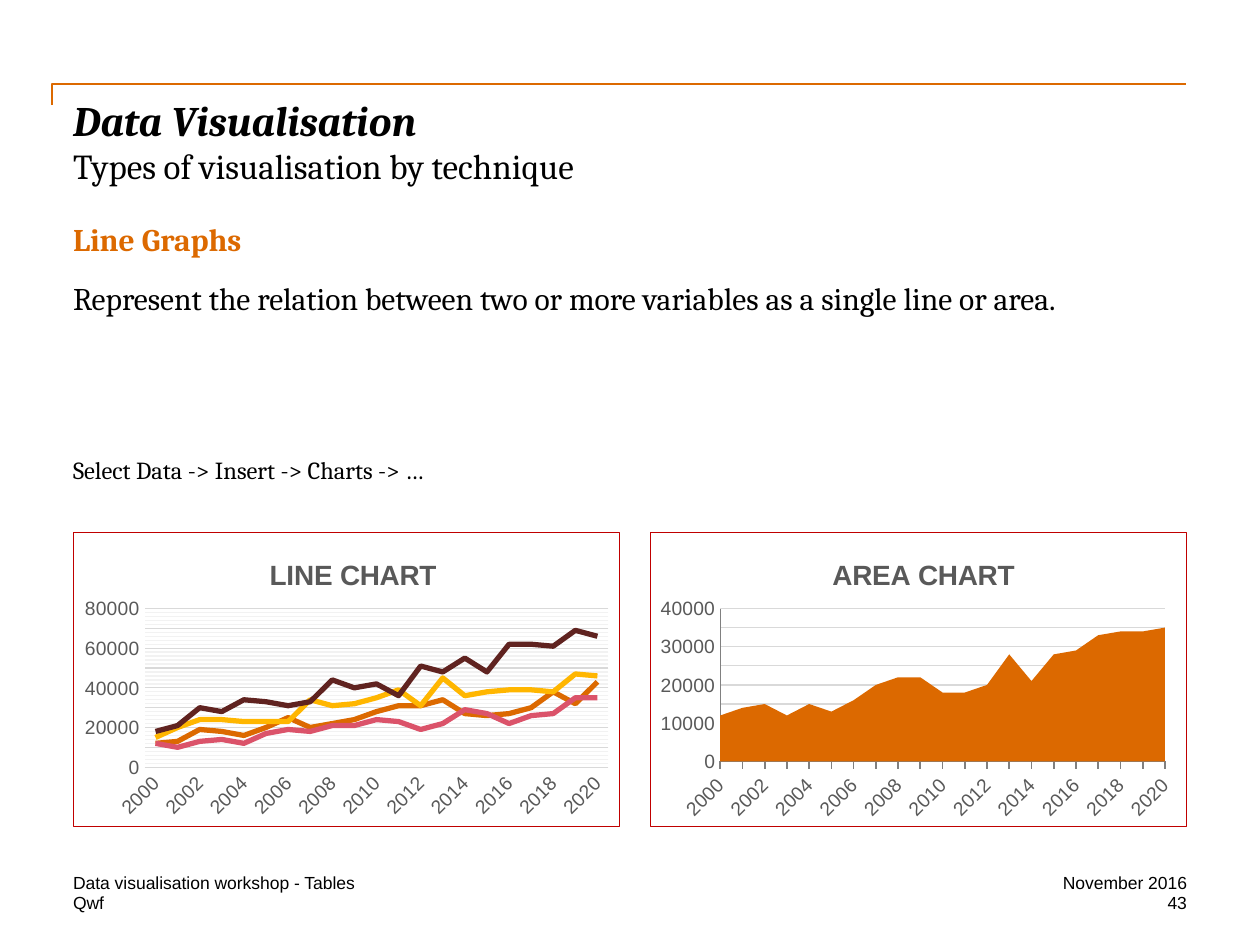
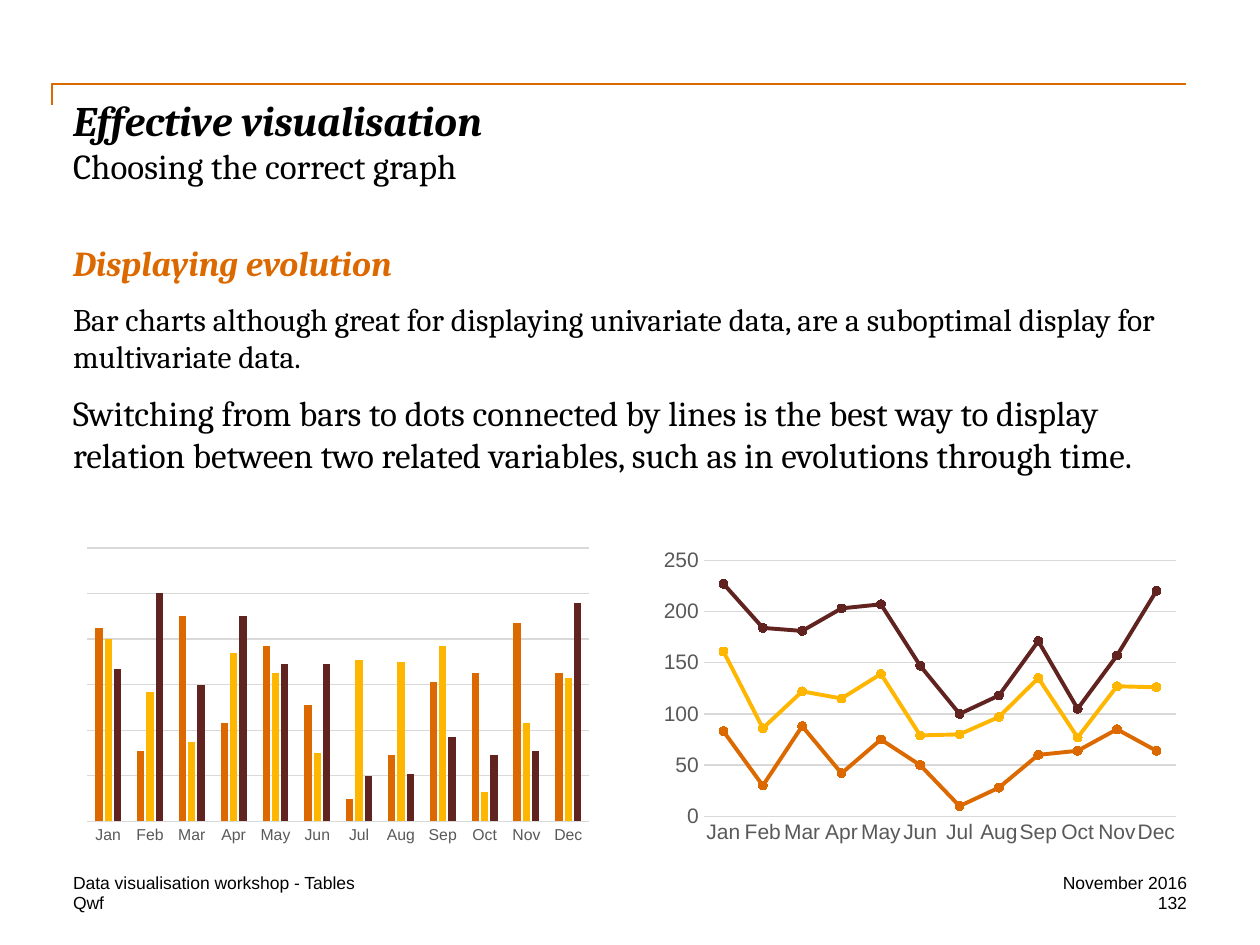
from dataclasses import dataclass
from typing import Optional, Sequence

from lxml import etree
from pptx import Presentation
from pptx.chart.data import CategoryChartData
from pptx.dml.color import RGBColor
from pptx.enum.chart import XL_CHART_TYPE, XL_MARKER_STYLE, XL_TICK_MARK
from pptx.enum.shapes import MSO_CONNECTOR
from pptx.enum.text import MSO_ANCHOR, PP_ALIGN
from pptx.oxml import parse_xml
from pptx.oxml.ns import nsdecls, qn
from pptx.util import Inches, Pt

LINE, AREA = XL_CHART_TYPE.LINE, XL_CHART_TYPE.AREA
COLUMNS, STACKED_DOTS = XL_CHART_TYPE.COLUMN_CLUSTERED, XL_CHART_TYPE.LINE_MARKERS_STACKED
LEFT, RIGHT = PP_ALIGN.LEFT, PP_ALIGN.RIGHT
TOP, BOTTOM = MSO_ANCHOR.TOP, MSO_ANCHOR.BOTTOM
NO_TICK, TICK_OUT = XL_TICK_MARK.NONE, XL_TICK_MARK.OUTSIDE
NO_MARKER, CIRCLE = XL_MARKER_STYLE.NONE, XL_MARKER_STYLE.CIRCLE
ELBOW = MSO_CONNECTOR.ELBOW

COLORS = {
    "text": "000000", "orange": "DC6900", "yellow": "FFB600", "maroon": "602320",
    "pink": "DB536A", "label": "595959", "grid": "D9D9D9", "minor_grid": "F2F2F2",
    "axis": "808080", "border": "C00000",
}
SERIES_COLORS = ["orange", "yellow", "maroon", "pink"]
SERIF, SANS = "Cambria", "Arial"
MARGIN, CONTENT_WIDTH = 0.58, 8.83
FOOTER_ROWS = (6.92, 7.08)

YEARS = [str(year) for year in range(2000, 2021)]
MONTHS = "Jan Feb Mar Apr May Jun Jul Aug Sep Oct Nov Dec".split()


@dataclass(frozen=True)
class Box:
    left: float
    top: float
    width: float
    height: float

    def lengths(self) -> list:
        return [Inches(v) for v in (self.left, self.top, self.width, self.height)]


@dataclass(frozen=True)
class Para:
    text: str
    size: float
    color: str = "text"
    font: str = SERIF
    bold: bool = False
    italic: bool = False
    before: float = 0
    after: float = 0


@dataclass(frozen=True)
class ChartSpec:
    """Plot is the inner plot area in fractions of the chart frame."""
    kind: int
    box: Box
    plot: Box
    categories: Sequence[str]
    series: Sequence[Sequence[float]]
    maximum: float
    major: float
    label_size: float
    minor: Optional[float] = None
    title: str = ""
    title_left: float = 0
    line_width: float = 0
    framed: bool = False
    value_labels: bool = True


@dataclass(frozen=True)
class SlideSpec:
    title: str
    subtitle: str
    number: str
    body_top: float
    body: Sequence[Para]
    charts: Sequence[ChartSpec]


def rgb(name: str) -> RGBColor:
    return RGBColor.from_string(COLORS[name])


def set_font(font, *, size: float, color: str = "text", name: str = SANS,
             bold: bool = False, italic: bool = False) -> None:
    font.size, font.name, font.bold, font.italic = Pt(size), name, bold, italic
    font.color.rgb = rgb(color)


def set_line(line, color: str, width: float) -> None:
    line.color.rgb = rgb(color)
    line.width = Pt(width)


def set_fill(fill, color: str) -> None:
    fill.solid()
    fill.fore_color.rgb = rgb(color)


def add_text(slide, box: Box, paras: Sequence[Para], *, align=LEFT, anchor=TOP) -> None:
    frame = slide.shapes.add_textbox(*box.lengths()).text_frame
    frame.word_wrap = True
    frame.vertical_anchor = anchor
    frame.margin_left = frame.margin_right = frame.margin_top = frame.margin_bottom = 0
    for index, para in enumerate(paras):
        paragraph = frame.add_paragraph() if index else frame.paragraphs[0]
        paragraph.alignment = align
        paragraph.space_before, paragraph.space_after = Pt(para.before), Pt(para.after)
        run = paragraph.add_run()
        run.text = para.text
        set_font(run.font, size=para.size, color=para.color, name=para.font,
                 bold=para.bold, italic=para.italic)


def add_header_rule(slide) -> None:
    """Long rule with a short drop at its left end: a quarter-turned elbow."""
    rule = slide.shapes.add_connector(
        ELBOW, Inches(5), Inches(5.25), Inches(4.83), Inches(-3.75))
    set_line(rule.line, "orange", 1)
    properties = rule._element.spPr
    properties.find(qn("a:xfrm")).set("rot", "5400000")
    properties.find(qn("a:prstGeom")).set("prst", "bentConnector2")
    etree.SubElement(properties, qn("a:effectLst"))


def add_footer(slide, number: str) -> None:
    sides = (
        (MARGIN, 5.75, LEFT, ("Data visualisation workshop - Tables", "Qwf")),
        (7.75, 1.67, RIGHT, ("November 2016", number)),
    )
    for left, width, align, texts in sides:
        for top, text in zip(FOOTER_ROWS, texts):
            add_text(slide, Box(left, top, width, 0.17), [Para(text, 10, font=SANS)],
                     align=align, anchor=BOTTOM)


def set_layout(parent, after: Optional[str], **fractions: float) -> None:
    """Place a chart part by hand, its layout following the named child."""
    for old in parent.findall(qn("c:layout")):
        parent.remove(old)
    target = '<c:layoutTarget val="inner"/>' if "w" in fractions else ""
    modes = '<c:xMode val="edge"/><c:yMode val="edge"/>'
    values = "".join(f'<c:{key} val="{value}"/>' for key, value in fractions.items())
    layout = parse_xml(f'<c:layout {nsdecls("c")}><c:manualLayout>{target}{modes}{values}'
                       "</c:manualLayout></c:layout>")
    if after:
        parent.find(qn(after)).addnext(layout)
    else:
        parent.insert(0, layout)


def line_properties(color: Optional[str], width: float = 0.75):
    """Chart shape properties with no fill and the given line, or none."""
    paint = (f'<a:solidFill><a:srgbClr val="{COLORS[color]}"/></a:solidFill>'
             if color else "<a:noFill/>")
    return parse_xml(f'<c:spPr {nsdecls("c", "a")}><a:noFill/>'
                     f'<a:ln w="{Pt(width)}">{paint}</a:ln></c:spPr>')


def style_axes(chart, spec: ChartSpec) -> None:
    is_area = spec.kind == AREA
    category, value = chart.category_axis, chart.value_axis
    for axis in (category, value):
        axis.major_tick_mark = axis.minor_tick_mark = NO_TICK
        set_font(axis.tick_labels.font, size=spec.label_size, color="label")
    category.has_major_gridlines = False
    set_line(category.format.line, "axis" if is_area else "grid", 1 if is_area else 0.75)
    if is_area:
        category.major_tick_mark = TICK_OUT
        set_line(value.format.line, "axis", 0.75)
        value._element.find(qn("c:crossBetween")).set("val", "midCat")
    else:
        value.format.line.fill.background()
    if spec.categories is YEARS:
        category._element.find(qn("c:txPr")).find(qn("a:bodyPr")).set("rot", "-2700000")
        skip = parse_xml(f'<c:tickLblSkip {nsdecls("c")} val="2"/>')
        category._element.find(qn("c:noMultiLvlLbl")).addprevious(skip)
    value.minimum_scale, value.maximum_scale, value.major_unit = 0, spec.maximum, spec.major
    value.tick_labels.number_format = "General"
    value.tick_labels.number_format_is_linked = False
    value.has_major_gridlines = True
    set_line(value.major_gridlines.format.line, "grid", 0.75)
    if spec.minor:
        value.minor_unit = spec.minor
        value.has_minor_gridlines = True
        value._element.find(qn("c:minorGridlines")).append(line_properties("minor_grid"))
    value.visible = spec.value_labels


def style_series(chart, spec: ChartSpec) -> None:
    plot = chart.plots[0]
    plot.vary_by_categories = False
    if spec.kind == COLUMNS:
        plot.gap_width, plot.overlap = 219, -27
    for series, color in zip(plot.series, SERIES_COLORS):
        if not spec.line_width:
            set_fill(series.format.fill, color)
            continue
        series.smooth = False
        set_line(series.format.line, color, spec.line_width)
        marker = series.marker
        if spec.kind == STACKED_DOTS:
            marker.style, marker.size = CIRCLE, 5
            set_fill(marker.format.fill, color)
            set_line(marker.format.line, color, 0.75)
        else:
            marker.style = NO_MARKER


def add_chart(slide, spec: ChartSpec) -> None:
    data = CategoryChartData()
    data.categories = spec.categories
    for index, values in enumerate(spec.series, start=1):
        data.add_series(f"Series {index}", values)
    chart = slide.shapes.add_chart(spec.kind, *spec.box.lengths(), data).chart
    set_font(chart.font, size=10)
    chart.has_legend = False
    chart.has_title = bool(spec.title)
    if spec.title:
        run = chart.chart_title.text_frame.paragraphs[0].add_run()
        run.text = spec.title
        set_font(run.font, size=16, color="label", bold=True)
        set_layout(chart.chart_title._element, "c:tx", x=spec.title_left, y=0.07)
    style_axes(chart, spec)
    style_series(chart, spec)
    plot = spec.plot
    chart_element = chart._chartSpace.find(qn("c:chart"))
    set_layout(chart_element.find(qn("c:plotArea")), None,
               x=plot.left, y=plot.top, w=plot.width, h=plot.height)
    chart_element.addnext(line_properties("border" if spec.framed else None, 0.5))


def add_slide(deck, spec: SlideSpec) -> None:
    slide = deck.slides.add_slide(deck.slide_layouts[6])
    add_header_rule(slide)
    add_text(slide, Box(MARGIN, 0.75, CONTENT_WIDTH, 1),
             [Para(spec.title, 24, bold=True, italic=True), Para(spec.subtitle, 20)])
    add_text(slide, Box(MARGIN, spec.body_top, CONTENT_WIDTH, 2.3), spec.body)
    add_footer(slide, spec.number)
    for chart in spec.charts:
        add_chart(slide, chart)


def thousands(*values: int) -> list[int]:
    return [value * 1000 for value in values]


LINE_CHART = ChartSpec(
    LINE, Box(MARGIN, 4.22, 4.34, 2.34), Box(0.13, 0.26, 0.85, 0.54), YEARS,
    [thousands(12, 13, 19, 18, 16, 20, 25, 20, 22, 24, 28, 31, 31, 34, 27, 26, 27, 30, 38, 32, 43),
     thousands(15, 20, 24, 24, 23, 23, 23, 34, 31, 32, 35, 39, 31, 45, 36, 38, 39, 39, 38, 47, 46),
     thousands(18, 21, 30, 28, 34, 33, 31, 33, 44, 40, 42, 36, 51, 48, 55, 48, 62, 62, 61, 69, 66),
     thousands(12, 10, 13, 14, 12, 17, 19, 18, 21, 21, 24, 23, 19, 22, 29, 27, 22, 26, 27, 35, 35)],
    maximum=80000, major=10000, minor=2000, label_size=11,
    title="LINE CHART", title_left=0.35, line_width=3, framed=True)
AREA_CHART = ChartSpec(
    AREA, Box(5.16, 4.22, 4.26, 2.34), Box(0.13, 0.26, 0.83, 0.52), YEARS,
    [thousands(12, 14, 15, 12, 15, 13, 16, 20, 22, 22, 18, 18, 20, 28, 21, 28, 29, 33, 34, 34, 35)],
    maximum=40000, major=5000, label_size=11,
    title="AREA CHART", title_left=0.33, framed=True)
MONTHLY_BARS = ChartSpec(
    COLUMNS, Box(0.61, 4.3, 4.15, 2.44), Box(0.02, 0.02, 0.96, 0.89), MONTHS,
    [[85, 31, 90, 43, 77, 51, 10, 29, 61, 65, 87, 65],
     [80, 57, 35, 74, 65, 30, 71, 70, 77, 13, 43, 63],
     [67, 100, 60, 90, 69, 69, 20, 21, 37, 29, 31, 96]],
    maximum=120, major=20, label_size=9, value_labels=False)
MONTHLY_DOTS = ChartSpec(
    STACKED_DOTS, Box(5.16, 4.3, 4.26, 2.45), Box(0.1, 0.06, 0.88, 0.83), MONTHS,
    [[83, 30, 88, 42, 75, 50, 10, 28, 60, 64, 85, 64],
     [78, 56, 34, 73, 64, 29, 70, 69, 75, 13, 42, 62],
     [66, 98, 59, 88, 68, 68, 20, 21, 36, 28, 30, 94]],
    maximum=250, major=50, label_size=12, line_width=2.25)

SLIDES = [
    SlideSpec("Data Visualisation", "Types of visualisation by technique", "43", 1.75, [
        Para("Line Graphs", 18, "orange", bold=True, after=12),
        Para("Represent the relation between two or more variables as a single line or area.",
             18, after=12),
        Para("Select Data -> Insert -> Charts -> …", 14, before=67),
    ], [LINE_CHART, AREA_CHART]),
    SlideSpec("Effective visualisation", "Choosing the correct graph", "132", 1.92, [
        Para("Displaying evolution", 20, "orange", bold=True, italic=True, after=9),
        Para("Bar charts although great for displaying univariate data, are a suboptimal "
             "display for multivariate data.", 18, after=9),
        Para("Switching from bars to dots connected by lines is the best way to display "
             "relation between two related variables, such as in evolutions through time.", 20),
    ], [MONTHLY_BARS, MONTHLY_DOTS]),
]


def main() -> None:
    deck = Presentation()
    deck.slide_width, deck.slide_height = Inches(10), Inches(7.5)
    for spec in SLIDES:
        add_slide(deck, spec)
    deck.save("out.pptx")


if __name__ == "__main__":
    main()
